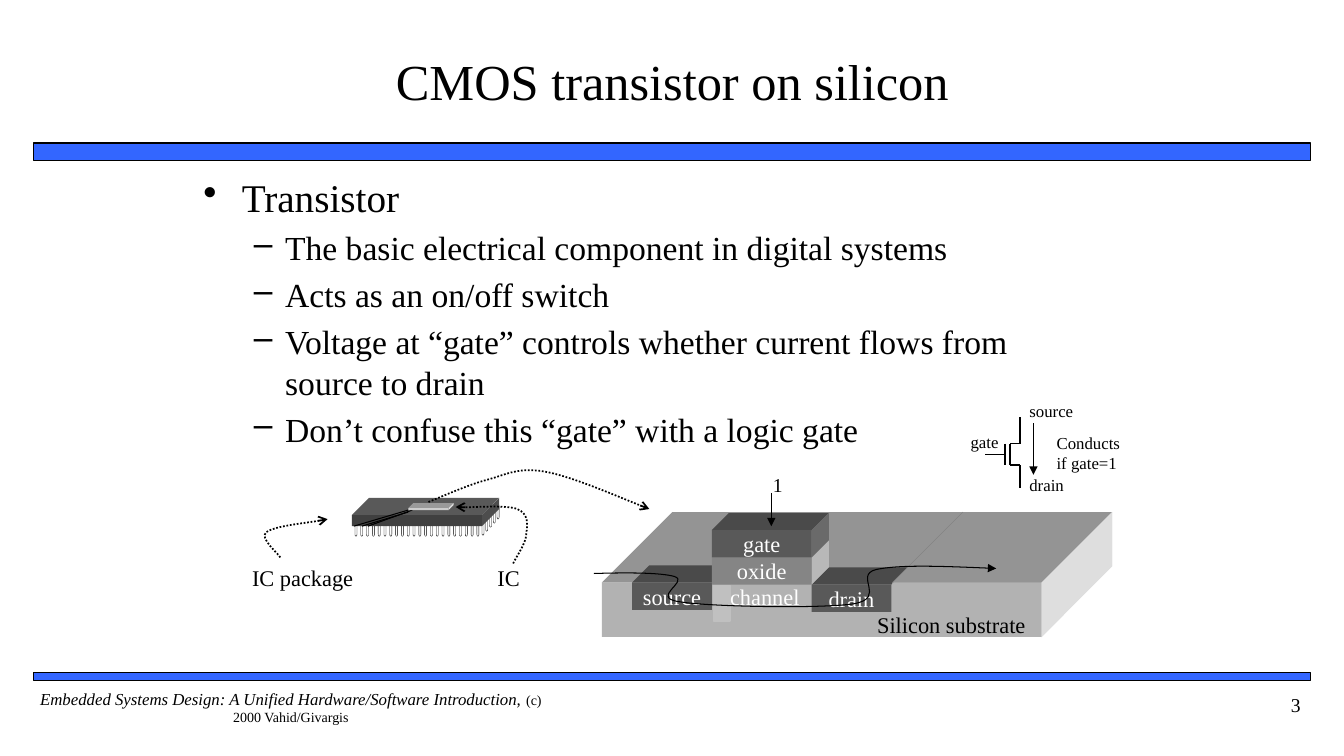
from lxml.etree import SubElement
from pptx import Presentation
from pptx.dml.color import RGBColor
from pptx.enum.dml import MSO_LINE
from pptx.enum.shapes import MSO_CONNECTOR, MSO_SHAPE
from pptx.enum.text import MSO_ANCHOR, PP_ALIGN
from pptx.oxml.ns import qn
from pptx.util import Inches, Pt

THEME = {
    "font": "Times New Roman", "black": "000000", "white": "FFFFFF", "bar": "3366FF",
    "channel": "C0C0C0", "seam": "808080",
    "title": 36, "topic": 28, "point": 24, "label": 16, "number": 14, "small": 12, "credit": 10,
}
# Colours of the front, top and right faces of each block; None leaves a face out
FACES = {
    "chip": ("404040", "595959", "4D4D4D"),
    "die": ("CCCCCC", "999999", "DEDEDE"),
    "substrate": ("B2B2B2", "949494", "DEDEDE"),
    "doped": ("595959", "4A4A4A", None),
    "oxide": ("858585", None, "B8B8B8"),
    "gate": ("595959", "4A4A4A", "6A6A6A"),
}
TITLE = "CMOS transistor on silicon"
TOPIC = "Transistor"
POINTS = [
    "The basic electrical component in digital systems",
    "Acts as an on/off switch",
    "Voltage at “gate” controls whether current flows from source to drain",
    "Don’t confuse this “gate” with a logic gate",
]
BOOK = "Embedded Systems Design: A Unified Hardware/Software Introduction, "
COPYRIGHT = "(c) 2000 Vahid/Givargis"
PAGE = "3"

BARS = [(0.33, 1.42, 12.67, 0.17), (0.33, 6.67, 12.67, 0.08)]
SIDE_PINS = [(4.93 - 0.0375 * k, 5.0 + 0.04 * k) for k in range(5)]
FRONT_PINS = [(4.73 - 0.0576 * k, 5.17) for k in range(22)]
CHIP = (3.49, 5.11, 1.29, 0.11)
DIE = (4.05, 5.04, 0.4, 0.02)
BOND_WIRES = [(4.05, 5.06, 3.51, 5.22), (4.05, 5.08, 3.59, 5.22), (4.09, 5.06, 3.65, 5.22)]
# Face set, front rectangle, depth, text on the front
TRANSISTOR_BLOCKS = [
    ("substrate", (5.97, 5.78, 4.36, 0.54), 0.7, ""),
    ("doped", (6.27, 5.78, 0.79, 0.27), 0.17, "source"),
    ("doped", (8.05, 5.8, 0.79, 0.27), 0.17, "drain"),
    ("oxide", (7.06, 5.53, 0.99, 0.27), 0.17, "oxide"),
    ("gate", (7.06, 5.26, 0.99, 0.27), 0.17, "gate"),
    ("substrate", (8.85, 5.78, 1.48, 0.54), 0.7, ""),
]
SEAM = (8.85, 5.78, 9.55, 5.08)
CHANNEL_EDGE = (7.08, 5.81, 0.16, 0.35)
# Start point, then two control points and an end point for each bend
POINTERS = [
    [(4.25, 4.98), (4.35, 4.94), (4.64, 4.81), (4.83, 4.76), (5.02, 4.71), (5.14, 4.63),
     (5.41, 4.68), (5.68, 4.73), (6.23, 4.97), (6.44, 5.05)],
    [(2.78, 5.53), (2.76, 5.49), (2.57, 5.34), (2.64, 5.28), (2.72, 5.22), (3.12, 5.18),
     (3.25, 5.15)],
    [(5.09, 5.59), (5.11, 5.54), (5.22, 5.39), (5.22, 5.3), (5.23, 5.21), (5.25, 5.1),
     (5.13, 5.05), (5.02, 5.01), (4.65, 5.04), (4.52, 5.03)],
]
CURRENT = [(5.89, 5.69), (6.22, 5.68), (6.55, 5.68), (6.69, 5.72), (6.84, 5.77), (6.44, 5.93),
           (6.74, 5.97), (7.03, 6.02), (8.15, 6.04), (8.47, 5.99), (8.8, 5.93), (8.46, 5.71),
           (8.69, 5.65), (8.93, 5.6), (9.4, 5.62), (9.88, 5.64)]
SYMBOL_WIRES = [
    (9.97, 4.4, 9.97, 4.61), (10.02, 4.4, 10.02, 4.61), (10.02, 4.4, 10.12, 4.4),
    (10.02, 4.61, 10.12, 4.61), (10.12, 4.84, 10.12, 4.61), (9.77, 4.51, 9.97, 4.51),
    (10.12, 4.4, 10.12, 4.14),
]
SYMBOL_FLOW = (10.25, 4.2, 10.25, 4.71)
GATE_INPUT = (7.65, 4.89, 7.65, 5.22)
LEFT, CENTER, RIGHT = PP_ALIGN.LEFT, PP_ALIGN.CENTER, PP_ALIGN.RIGHT
# Box, lines of text, size, colour, alignment
LABELS = [
    ((2.5, 5.6, 1.19, 0.27), ["IC package"], "label", "black", LEFT),
    ((4.48, 5.6, 1.13, 0.27), ["IC"], "label", "black", CENTER),
    ((7.19, 5.79, 0.79, 0.27), ["channel"], "label", "white", CENTER),
    ((8.64, 6.06, 1.59, 0.27), ["Silicon substrate"], "label", "black", CENTER),
    ((9.59, 4.28, 0.35, 0.15), ["gate"], "small", "black", CENTER),
    ((10.21, 3.98, 0.56, 0.19), ["source"], "small", "black", LEFT),
    ((10.21, 4.71, 0.53, 0.15), ["drain"], "small", "black", LEFT),
    ((10.48, 4.29, 0.83, 0.41), ["Conducts", "if gate=1"], "small", "black", LEFT),
    ((7.56, 4.69, 0.31, 0.2), ["1"], "number", "black", CENTER),
]

deck = Presentation()
deck.slide_width, deck.slide_height = Inches(13.33), Inches(7.5)
shapes = deck.slides.add_slide(deck.slide_layouts[6]).shapes


def rgb(colour):
    return RGBColor.from_string(THEME.get(colour, colour))


def style_run(run, size, colour="black", italic=False):
    run.font.name, run.font.size = THEME["font"], Pt(THEME[size])
    run.font.color.rgb, run.font.italic = rgb(colour), italic


def write(frame, lines, size, colour="black", align=LEFT, inset=(0, 0)):
    frame.word_wrap = True
    frame.margin_left = frame.margin_right = Inches(inset[0])
    frame.margin_top = frame.margin_bottom = Inches(inset[1])
    frame.text = "\n".join(lines)
    for paragraph in frame.paragraphs:
        paragraph.alignment = align
        for run in paragraph.runs:
            style_run(run, size, colour)


def add_text(box, *content, **options):
    frame = shapes.add_textbox(*map(Inches, box)).text_frame
    write(frame, *content, **options)
    return frame


def paint(shape, fill, line=None, width=1):
    shape.shadow.inherit = False
    shape.fill.solid()
    shape.fill.fore_color.rgb = rgb(fill)
    if line:
        shape.line.color.rgb, shape.line.width = rgb(line), Pt(width)
    else:
        shape.line.fill.background()


def add_solid(kind, box, *look):
    shape = shapes.add_shape(kind, *map(Inches, box))
    paint(shape, *look)
    return shape


def outline(points, close):
    start, *rest = [(Inches(x), Inches(y)) for x, y in points]
    builder = shapes.build_freeform(*start, scale=1.0)
    builder.add_line_segments(rest, close=close)
    return builder.convert_to_shape()


def add_block(faces, box, depth, text=""):
    """Draw a box receding up and to the right."""
    front, top, right = FACES[faces]
    x, y, w, h = box
    r, b = x + w, y + h
    if top:
        paint(outline([(x, y), (x + depth, y - depth), (r + depth, y - depth), (r, y)], True), top)
    if right:
        paint(outline([(r, y), (r + depth, y - depth), (r + depth, b - depth), (r, b)], True), right)
    face = add_solid(MSO_SHAPE.RECTANGLE, box, front)
    if text:
        write(face.text_frame, [text], "label", "white", CENTER)


def add_arrowhead(shape, head):
    SubElement(shape.line._get_or_add_ln(), qn("a:tailEnd"), type=head)


def add_wire(ends, width, head=None, colour="black"):
    wire = shapes.add_connector(MSO_CONNECTOR.STRAIGHT, *map(Inches, ends))
    wire.line.color.rgb, wire.line.width = rgb(colour), Pt(width)
    if head:
        add_arrowhead(wire, head)
    SubElement(wire._element.spPr, qn("a:effectLst"))


def add_curve(points, width, head, dash=None):
    curve = outline(points, False)
    curve.shadow.inherit = False
    curve.fill.background()
    curve.line.color.rgb, curve.line.width = rgb("black"), Pt(width)
    if dash:
        curve.line.dash_style = dash
    add_arrowhead(curve, head)
    segments = list(curve._element.iter(qn("a:lnTo")))
    track = segments[0].getparent()
    for i in range(0, len(segments), 3):
        bend = SubElement(track, qn("a:cubicBezTo"))
        for segment in segments[i:i + 3]:
            bend.append(segment[0])
            track.remove(segment)


def add_bullet(paragraph, mark, indent, hang):
    props = paragraph._p.get_or_add_pPr()
    props.set("marL", str(Inches(indent)))
    props.set("indent", str(-Inches(hang)))
    SubElement(props, qn("a:buChar"), char=mark)


for bar in BARS:
    add_solid(MSO_SHAPE.RECTANGLE, bar, "bar", "black")
title = add_text((0.56, 0.17, 12.22, 1.25), [TITLE], "title", align=CENTER, inset=(0, 0.05))
title.vertical_anchor = MSO_ANCHOR.MIDDLE

body = add_text((1.92, 1.67, 8.5, 2.42), [TOPIC, *POINTS], "point", inset=(0.1, 0.05))
style_run(body.paragraphs[0].runs[0], "topic")
for level, paragraph in enumerate(body.paragraphs):
    paragraph.space_before = Pt(THEME["point" if level else "topic"] * 0.2)
    add_bullet(paragraph, *(("–", 0.81, 0.31) if level else ("•", 0.38, 0.38)))

footer = add_text((0.33, 6.83, 5.11, 0.5), [BOOK], "small", align=CENTER).paragraphs[0]
style_run(footer.runs[0], "small", italic=True)
notice = footer.add_run()
notice.text = COPYRIGHT
style_run(notice, "credit")
page = add_text((11.67, 6.83, 1.33, 0.5), [PAGE], "number", align=RIGHT, inset=(0.1, 0.05))
page.paragraphs[0].space_before = Pt(THEME["number"] * 0.5)

for x, y in SIDE_PINS + FRONT_PINS:
    pin = add_solid(MSO_SHAPE.CAN, (x, y, 0.02, 0.15), "white", "black", 0.25)
    pin.adjustments[0] = 1.9
add_block("chip", CHIP, 0.17)
for bond in BOND_WIRES:
    add_wire(bond, 0.75)
add_block("die", DIE, 0.05)

for block in TRANSISTOR_BLOCKS:
    add_block(*block)
add_wire(SEAM, 0.25, colour="seam")
add_solid(MSO_SHAPE.RECTANGLE, CHANNEL_EDGE, "channel", "channel")

for wire in SYMBOL_WIRES:
    add_wire(wire, 1.25)
add_wire(SYMBOL_FLOW, 1.25, "triangle")
for label in LABELS:
    add_text(*label)
for pointer in POINTERS:
    add_curve(pointer, 1.25, "arrow", MSO_LINE.ROUND_DOT)
add_curve(CURRENT, 0.75, "triangle")
add_wire(GATE_INPUT, 0.75, "triangle")

deck.save("out.pptx")
